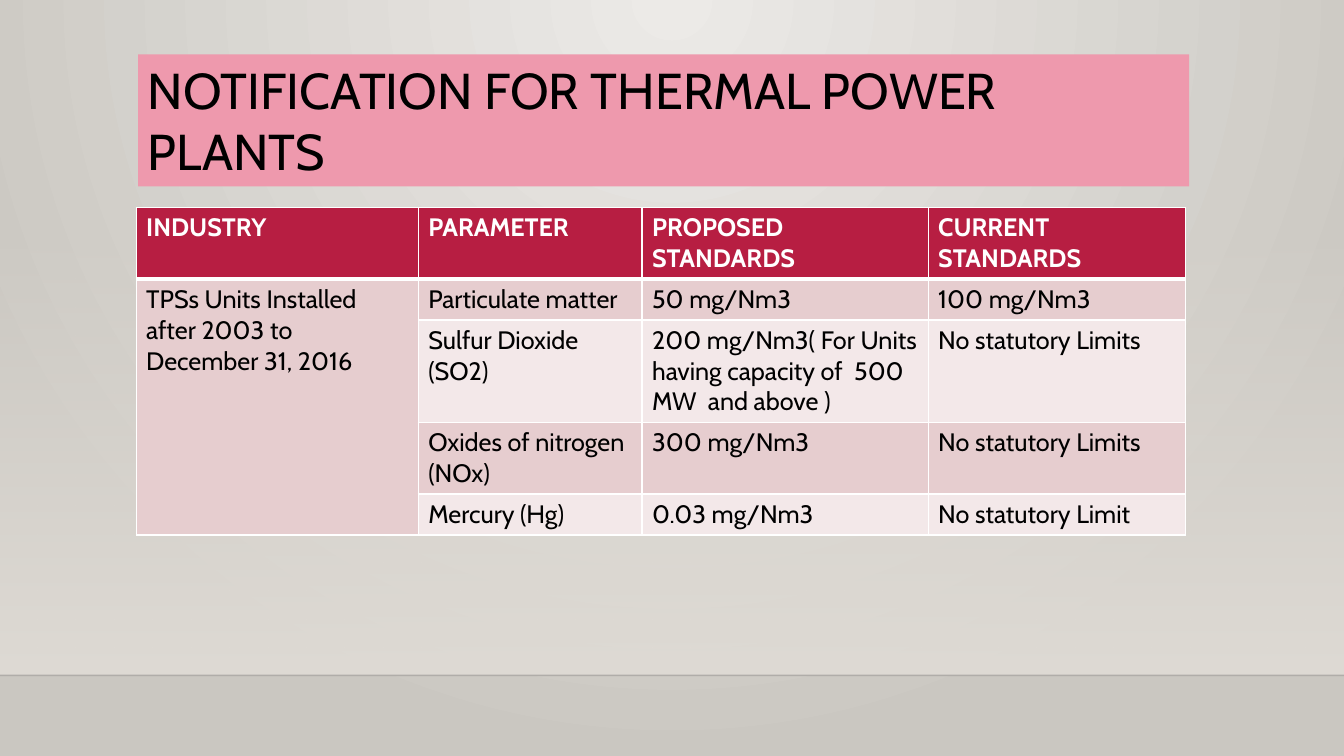
from lxml import etree
from pptx import Presentation
from pptx.dml.color import RGBColor
from pptx.enum.shapes import MSO_CONNECTOR, MSO_SHAPE
from pptx.enum.text import MSO_ANCHOR, PP_ALIGN
from pptx.oxml.ns import qn
from pptx.util import Cm, Pt

# Content
TITLE = "NOTIFICATION FOR THERMAL POWER PLANTS"
HEADINGS = ["INDUSTRY", "PARAMETER", "PROPOSED STANDARDS", "CURRENT STANDARDS"]
INDUSTRY = "TPSs Units Installed after 2003 to  December 31, 2016"
LIMITS = [
    ("Particulate matter", "50 mg/Nm3", "100 mg/Nm3"),
    ("Sulfur Dioxide\n(SO2)",
     "200 mg/Nm3( For Units having capacity of  500 MW  and above )",
     "No statutory Limits"),
    ("Oxides of nitrogen\n(NOx)", "300 mg/Nm3", "No statutory Limits"),
    ("Mercury (Hg)", "0.03 mg/Nm3", "No statutory Limit"),
]

# Style
FONT = "Cabin"
BLACK = RGBColor(0x00, 0x00, 0x00)
WHITE = RGBColor(0xFF, 0xFF, 0xFF)
PINK = RGBColor(0xEE, 0x99, 0xAD)
CRIMSON = RGBColor(0xB7, 0x1E, 0x42)
BANDS = [RGBColor(0xE6, 0xCD, 0xCF), RGBColor(0xF3, 0xE8, 0xE9)]
WALL_LIGHT = RGBColor(0xEC, 0xEA, 0xE7)
WALL_DARK = RGBColor(0xCA, 0xC7, 0xC1)
GLOW = RGBColor(0xDF, 0xDB, 0xD5)
FLOOR_LINE = RGBColor(0x00, 0x00, 0x01)
LEFT, TOP = PP_ALIGN.LEFT, MSO_ANCHOR.TOP

# Layout in cm
WIDTH, HEIGHT = 33.87, 19.05
FLOOR_TOP = 17.02
GLOW_TOP = 5.61
COLUMN_WIDTHS = [7.11, 5.64, 7.21, 6.48]
ROW_HEIGHTS = [1.77, 1.03, 2.54, 1.77, 1.03]


def set_gradient(fill, *colors):
    fill.gradient()
    for stop, color, position in zip(fill.gradient_stops, colors, (0, 1)):
        stop.color.rgb = color
        stop.position = position


def set_alpha(element, percent):
    color = next(element.iter(qn("a:srgbClr")))
    etree.SubElement(color, qn("a:alpha"), val=str(percent * 1000))


def write(frame, text, size, color, bold=False):
    frame.word_wrap = True
    frame.text = text
    for paragraph in frame.paragraphs:
        paragraph.alignment = LEFT
        font = paragraph.font
        font.name, font.size, font.bold = FONT, Pt(size), bold
        font.color.rgb = color


def set_borders(cell, bottom=1, top=1):
    properties = cell._tc.get_or_add_tcPr()
    sides = [("a:lnL", 1), ("a:lnR", 1), ("a:lnT", top), ("a:lnB", bottom)]
    for index, (side, points) in enumerate(sides):
        border = etree.Element(qn(side), w=str(Pt(points)))
        solid = etree.SubElement(border, qn("a:solidFill"))
        etree.SubElement(solid, qn("a:srgbClr"), val=str(WHITE))
        properties.insert(index, border)


prs = Presentation()
prs.slide_width, prs.slide_height = Cm(WIDTH), Cm(HEIGHT)
slide = prs.slides.add_slide(prs.slide_layouts[6])

# Background: light spreading from the top centre
set_gradient(slide.background.fill, WALL_LIGHT, WALL_DARK)
wall = next(slide.element.iter(qn("a:gradFill")))
linear = wall.find(qn("a:lin"))
circle = etree.Element(qn("a:path"), {"path": "circle"})
etree.SubElement(circle, qn("a:fillToRect"), l="43000", t="0", r="43000", b="100000")
wall.replace(linear, circle)

# Glow above the floor
glow = slide.shapes.add_shape(
    MSO_SHAPE.RECTANGLE, 0, Cm(GLOW_TOP), Cm(WIDTH), Cm(FLOOR_TOP - GLOW_TOP))
glow.shadow.inherit = False
set_gradient(glow.fill, GLOW, GLOW)
glow.fill.gradient_angle = 270
set_alpha(glow.element, 0)
glow.line.fill.background()

# Floor line
floor = slide.shapes.add_connector(
    MSO_CONNECTOR.STRAIGHT, 0, Cm(FLOOR_TOP), Cm(WIDTH), Cm(FLOOR_TOP))
floor.line.color.rgb = FLOOR_LINE
floor.line.width = Pt(1)
set_alpha(floor.element, 20)
etree.SubElement(floor.element.spPr, qn("a:effectLst"))

# Title
title = slide.shapes.add_shape(
    MSO_SHAPE.RECTANGLE, Cm(3.48), Cm(1.37), Cm(26.49), Cm(3.33))
title.shadow.inherit = False
title.fill.solid()
title.fill.fore_color.rgb = PINK
title.line.fill.background()
title.text_frame.vertical_anchor = TOP
write(title.text_frame, TITLE, 36, BLACK)

# Table of limits
rows = [HEADINGS] + [(INDUSTRY if i == 0 else "", *limit)
                     for i, limit in enumerate(LIMITS)]
table = slide.shapes.add_table(
    len(rows), len(HEADINGS), Cm(3.43), Cm(5.23),
    Cm(sum(COLUMN_WIDTHS)), Cm(sum(ROW_HEIGHTS))).table
for column, width in zip(table.columns, COLUMN_WIDTHS):
    column.width = Cm(width)
for row, height in zip(table.rows, ROW_HEIGHTS):
    row.height = Cm(height)
table.cell(1, 0).merge(table.cell(len(LIMITS), 0))

for r, texts in enumerate(rows):
    heading = r == 0
    for c, text in enumerate(texts):
        cell = table.cell(r, c)
        cell.fill.solid()
        cell.fill.fore_color.rgb = CRIMSON if heading else BANDS[(r - 1) % 2]
        set_borders(cell, bottom=3 if heading else 1, top=3 if r == 1 else 1)
        if not cell.is_spanned:
            write(cell.text_frame, text, 18, WHITE if heading else BLACK, heading)

prs.save("out.pptx")
